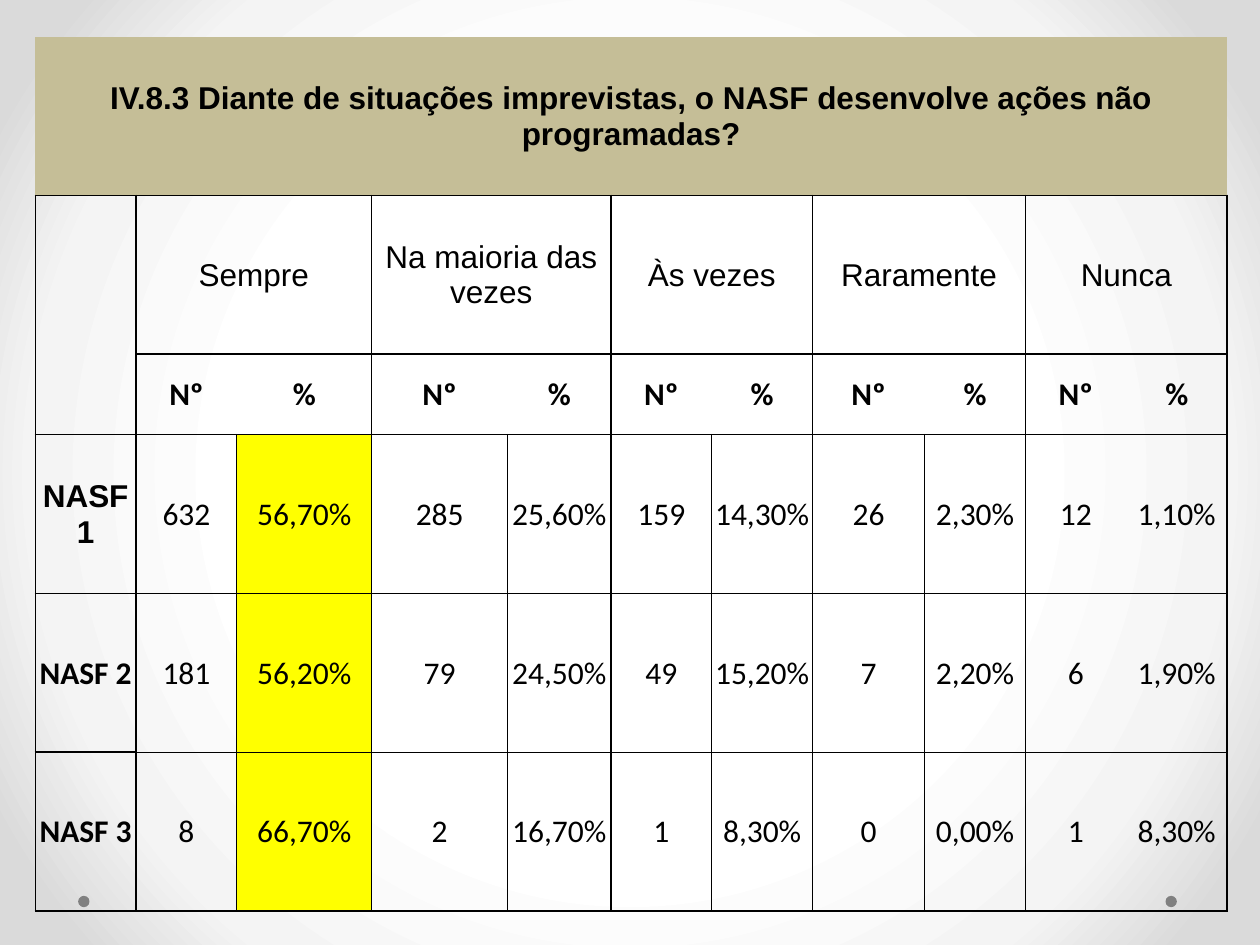
from pptx import Presentation
from pptx.dml.color import RGBColor
from pptx.enum.shapes import MSO_SHAPE
from pptx.enum.text import MSO_ANCHOR, PP_ALIGN
from pptx.oxml import parse_xml
from pptx.oxml.ns import nsdecls, qn
from pptx.util import Inches, Pt

OVAL = MSO_SHAPE.OVAL
CENTER = PP_ALIGN.CENTER
MIDDLE = MSO_ANCHOR.MIDDLE

BLACK = RGBColor(0x00, 0x00, 0x00)
GREY = RGBColor(0x80, 0x80, 0x80)
KHAKI = RGBColor(0xC5, 0xBE, 0x97)
YELLOW = RGBColor(0xFF, 0xFF, 0x00)
BACKGROUND_STOPS = [
    (50, RGBColor(0xFF, 0xFF, 0xFF)),
    (76, RGBColor(0xF4, 0xF4, 0xF4)),
    (92, RGBColor(0xDA, 0xDA, 0xDA)),
]

QUESTION = "IV.8.3 Diante de situações imprevistas, o NASF desenvolve ações não programadas?"
ANSWERS = ["Sempre", "Na maioria das vezes", "Às vezes", "Raramente", "Nunca"]
MEASURES = ["Nº", "%"]
RESULTS = [
    ("NASF 1", "632", "56,70%", "285", "25,60%", "159", "14,30%", "26", "2,30%", "12", "1,10%"),
    ("NASF 2", "181", "56,20%", "79", "24,50%", "49", "15,20%", "7", "2,20%", "6", "1,90%"),
    ("NASF 3", "8", "66,70%", "2", "16,70%", "1", "8,30%", "0", "0,00%", "1", "8,30%"),
]

COLUMN_WIDTHS = [0.8, 0.8, 1.07, 1.08, 0.82, 0.8, 0.8, 0.89, 0.8, 0.8, 0.8]
TALL, SHORT = 1.26, 0.64
ROW_HEIGHTS = [TALL, TALL, SHORT] + [TALL] * len(RESULTS)
LAST_ROW, LAST_COLUMN = len(ROW_HEIGHTS) - 1, len(COLUMN_WIDTHS) - 1
FIRST_RESULT_ROW = 3
HIGHLIGHT_COLUMN = 2
THICK, THIN, NONE = 1, 0.5, 0
DOT_LEFTS, DOT_TOP, DOT_SIZE = (9.25, 0.62), 7.11, 0.09
NO_GRID_STYLE = "{2D5ABB26-0587-4C30-8999-92F81FD0307C}"


def paint_background(slide):
    slide.background.fill.gradient()
    linear = slide.element.find(".//" + qn("a:gradFill"))
    stops = "".join(
        f'<a:gs pos="{share * 1000}"><a:srgbClr val="{color}"/></a:gs>'
        for share, color in BACKGROUND_STOPS
    )
    radial = parse_xml(
        f'<a:gradFill {nsdecls("a")} rotWithShape="1"><a:gsLst>{stops}</a:gsLst>'
        '<a:path path="circle"><a:fillToRect l="50000" t="50000" r="50000" b="50000"/>'
        "</a:path></a:gradFill>"
    )
    linear.getparent().replace(linear, radial)


def add_dots(slide):
    for left in DOT_LEFTS:
        dot = slide.shapes.add_shape(
            OVAL, Inches(left), Inches(DOT_TOP), Inches(DOT_SIZE), Inches(DOT_SIZE)
        )
        dot.shadow.inherit = False
        dot.fill.solid()
        dot.fill.fore_color.rgb = GREY
        dot.line.fill.background()


def border_widths(row, column):
    """Points for the left, right, top and bottom edges of a cell."""
    if row == 0:
        return NONE, NONE, NONE, THICK
    if row == 1 or column == 0:
        return THICK, THICK, THICK, THICK
    is_count = column % 2 == 1
    in_results = row >= FIRST_RESULT_ROW
    in_last_answer = column >= LAST_COLUMN - 1
    inner = THIN if in_results and not in_last_answer else NONE
    return (
        THICK if is_count else inner,
        inner if is_count else THICK,
        THICK if row <= FIRST_RESULT_ROW else THIN,
        THICK if row in (2, LAST_ROW) else THIN,
    )


def set_borders(cell, widths):
    properties = cell._tc.get_or_add_tcPr()
    for position, (side, width) in enumerate(zip("LRTB", widths)):
        paint = f'<a:solidFill><a:srgbClr val="{BLACK}"/></a:solidFill>' if width else "<a:noFill/>"
        edge = parse_xml(f'<a:ln{side} {nsdecls("a")} w="{Pt(width)}">{paint}</a:ln{side}>')
        properties.insert(position, edge)


def format_cell(cell, row, column):
    cell.vertical_anchor = MIDDLE
    cell.margin_left = cell.margin_right = cell.margin_top = Inches(0.01)
    cell.margin_bottom = 0
    fill = None
    if row == 0:
        fill = KHAKI
    elif row >= FIRST_RESULT_ROW and column == HIGHLIGHT_COLUMN:
        fill = YELLOW
    if fill is None:
        cell.fill.background()
    else:
        cell.fill.solid()
        cell.fill.fore_color.rgb = fill
    set_borders(cell, border_widths(row, column))


def write(cell, text, font_name, bold):
    paragraph = cell.text_frame.paragraphs[0]
    paragraph.alignment = CENTER
    run = paragraph.add_run()
    run.text = text
    run.font.name = font_name
    run.font.size = Pt(18)
    run.font.bold = bold
    run.font.color.rgb = BLACK


def add_results_table(slide):
    frame = slide.shapes.add_table(
        len(ROW_HEIGHTS), len(COLUMN_WIDTHS), Inches(0.28), Inches(0.29),
        Inches(sum(COLUMN_WIDTHS)), Inches(sum(ROW_HEIGHTS)),
    )
    table = frame.table
    table.first_row = table.horz_banding = False
    table._tbl.tblPr.find(qn("a:tableStyleId")).text = NO_GRID_STYLE
    for column, width in zip(table.columns, COLUMN_WIDTHS):
        column.width = Inches(width)
    for row, height in zip(table.rows, ROW_HEIGHTS):
        row.height = Inches(height)
    for row in range(LAST_ROW + 1):
        for column in range(LAST_COLUMN + 1):
            format_cell(table.cell(row, column), row, column)

    table.cell(0, 0).merge(table.cell(0, LAST_COLUMN))
    write(table.cell(0, 0), QUESTION, "Arial", True)
    table.cell(1, 0).merge(table.cell(2, 0))
    for index, answer in enumerate(ANSWERS):
        first = 1 + index * len(MEASURES)
        table.cell(1, first).merge(table.cell(1, first + 1))
        write(table.cell(1, first), answer, "Arial", False)
        for offset, measure in enumerate(MEASURES):
            write(table.cell(2, first + offset), measure, "Calibri", True)
    for row, values in enumerate(RESULTS, FIRST_RESULT_ROW):
        for column, value in enumerate(values):
            is_first_label = row == FIRST_RESULT_ROW and column == 0
            write(table.cell(row, column), value,
                  "Arial" if is_first_label else "Calibri", column == 0)


def main():
    presentation = Presentation()
    presentation.slide_width = Inches(10)
    presentation.slide_height = Inches(7.5)
    slide = presentation.slides.add_slide(presentation.slide_layouts[6])
    paint_background(slide)
    add_dots(slide)
    add_results_table(slide)
    presentation.save("out.pptx")


if __name__ == "__main__":
    main()
